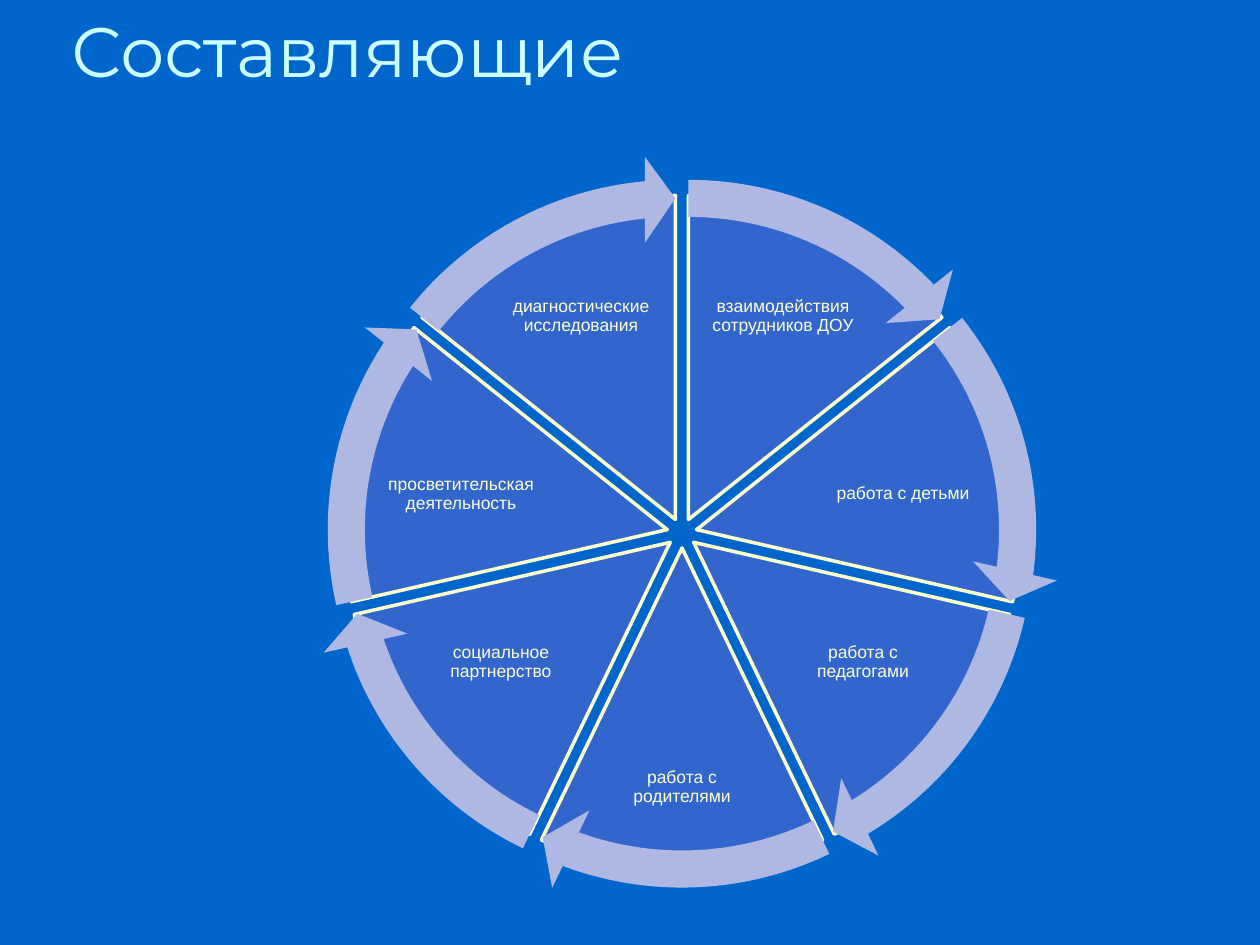
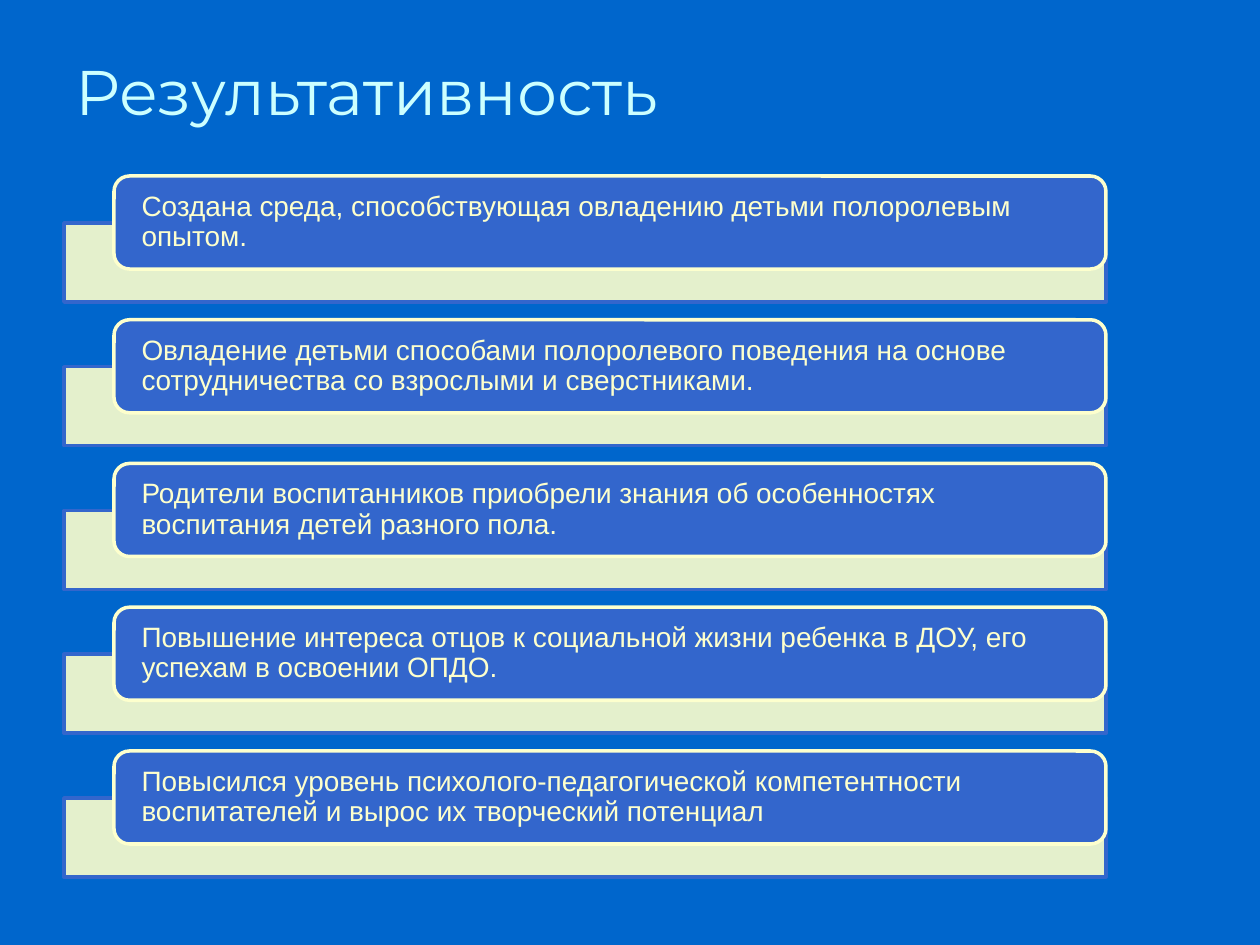
import math

from lxml import etree
from pptx import Presentation
from pptx.dml.color import RGBColor
from pptx.enum.shapes import MSO_SHAPE
from pptx.enum.text import MSO_ANCHOR, PP_ALIGN
from pptx.oxml.ns import qn
from pptx.util import Pt

PIE, ARROW = MSO_SHAPE.PIE, MSO_SHAPE.CIRCULAR_ARROW
RECT, ROUND = MSO_SHAPE.RECTANGLE, MSO_SHAPE.ROUNDED_RECTANGLE
TOP, MIDDLE = MSO_ANCHOR.TOP, MSO_ANCHOR.MIDDLE
LEFT, CENTER = PP_ALIGN.LEFT, PP_ALIGN.CENTER

COLORS = {
    "background": "0066CC",
    "title": "CCFFFF",
    "block": "3366CC",
    "cream": "FDFFCD",
    "arrow": "AEB8E2",
}
TITLE_FONT, BODY_FONT = "Montserrat", "Arial"
PX = 914400 // 126
FULL_TURN = 216
TOP_ANGLE = 162
HEAD_ANGLE = 3.275

COMPONENTS = [
    "взаимодействия сотрудников ДОУ",
    "работа с детьми",
    "работа с педагогами",
    "работа с родителями",
    "социальное партнерство",
    "просветительская деятельность",
    "диагностические исследования",
]
RIGHT_LABELS = [(24, -278, 154, 123), (132, -93, 178, 108), (104, 69, 154, 120)]
BOTTOM_LABEL = (-75, 200, 150, 108)

RESULTS = [
    "Создана среда, способствующая овладению детьми полоролевым опытом.",
    "Овладение детьми способами полоролевого поведения на основе "
    "сотрудничества со взрослыми и сверстниками.",
    "Родители воспитанников приобрели знания об особенностях "
    "воспитания детей разного пола.",
    "Повышение интереса отцов к социальной жизни ребенка в ДОУ, "
    "его успехам в освоении ОПДО.",
    "Повысился уровень психолого-педагогической компетентности "
    "воспитателей и вырос их творческий потенциал",
]


def rgb(name):
    """Return the named palette colour."""
    return RGBColor.from_string(COLORS[name])


def emu(box):
    """Scale a box in px to whole EMU."""
    return [round(v * PX) for v in box]


def add_block(s, kind, box, fill, line=None, adj=(), opacity=None):
    """Add a flat preset shape with optional outline, adjustments and opacity."""
    sp = s.shapes.add_shape(kind, *emu(box))
    sp.shadow.inherit = False
    for i, value in enumerate(adj):
        sp.adjustments[i] = value
    sp.fill.solid()
    sp.fill.fore_color.rgb = rgb(fill)
    if opacity is not None:
        clr = sp._element.spPr.find(qn("a:solidFill")).find(qn("a:srgbClr"))
        etree.SubElement(clr, qn("a:alpha")).set("val", str(opacity * 1000))
    if line:
        sp.line.color.rgb = rgb(line)
        sp.line.width = Pt(2)
    else:
        sp.line.fill.background()
    return sp


def write(sp, text, size, font, color, align=LEFT, anchor=MIDDLE, insets=(13, 6)):
    """Write one styled paragraph into a shape and return it."""
    tf = sp.text_frame
    tf.word_wrap = True
    tf.vertical_anchor = anchor
    tf.margin_left = tf.margin_right = insets[0] * PX
    tf.margin_top = tf.margin_bottom = insets[1] * PX
    p = tf.paragraphs[0]
    p.alignment = align
    r = p.add_run()
    r.text = text
    r.font.size = Pt(size)
    r.font.name = font
    r.font.color.rgb = rgb(color)
    return p


def write_body(sp, text, size, align, insets):
    """Write cream body text with tight line spacing."""
    p = write(sp, text, size, BODY_FONT, "cream", align, insets=insets)
    p.line_spacing = 0.9
    p.space_after = Pt(0.35 * size)


def add_slide(prs, title, size, box, anchor):
    """Add a blank slide with the shared background and title style."""
    s = prs.slides.add_slide(prs.slide_layouts[6])
    s.background.fill.solid()
    s.background.fill.fore_color.rgb = rgb("background")
    write(s.shapes.add_textbox(*emu(box)), title, size, TITLE_FONT, "title",
          anchor=anchor)
    return s


def add_cycle(s, box):
    """Draw the exploded wheel of sectors, labels and arrows inside a box."""
    x, y, side, _ = box
    rim, explode = 40, 15
    cx, cy = x + side / 2, y + side / 2
    span = FULL_TURN / len(COMPONENTS)
    mirrored = [(-dx - w, dy, w, h) for dx, dy, w, h in reversed(RIGHT_LABELS)]
    labels = RIGHT_LABELS + [BOTTOM_LABEL] + mirrored
    arrows = []
    for i, (text, (dx, dy, w, h)) in enumerate(zip(COMPONENTS, labels)):
        start = (TOP_ANGLE + i * span) % FULL_TURN
        end = (start + span) % FULL_TURN
        middle = math.tau * (start + span / 2) / FULL_TURN
        left, top = x + explode * math.cos(middle), y + explode * math.sin(middle)
        sector = (left + rim, top + rim, side - 2 * rim, side - 2 * rim)
        add_block(s, PIE, sector, "block", "cream", (start, end))
        label = s.shapes.add_textbox(*emu((cx + dx, cy + dy, w, h)))
        write_body(label, text, 10, CENTER, (1, 1))
        tip = (end - HEAD_ANGLE) % FULL_TURN
        arrows.append(((left, top, side, side),
                       (0.051, HEAD_ANGLE, tip, start, 0.059)))
    for arrow_box, adj in arrows:
        add_block(s, ARROW, arrow_box, "arrow", adj=adj)


def add_results(s, box):
    """Stack equally spaced result cards over pale bands inside a box."""
    x, y, w, h = box
    indent, card_h, band_drop, band_h = 50, 93, 47, 79
    step = (h - band_drop - band_h) / (len(RESULTS) - 1)
    for i, text in enumerate(RESULTS):
        top = y + i * step
        add_block(s, RECT, (x, top + band_drop, w, band_h), "cream", "block",
                  opacity=90)
        card = add_block(s, ROUND, (x + indent, top, w - indent, card_h),
                         "block", "cream")
        write_body(card, text, 16, LEFT, (23, 0))


def main():
    """Build both slides and save the presentation."""
    prs = Presentation()
    prs.slide_width, prs.slide_height = emu((1260, 945))
    s = add_slide(prs, "Составляющие", 40, (59, 2, 1092, 180), TOP)
    add_cycle(s, (318, 169, 728, 728))
    s = add_slide(prs, "Результативность", 36, (63, 45, 998, 91), MIDDLE)
    add_results(s, (64, 176, 1042, 701))
    prs.save("out.pptx")


if __name__ == "__main__":
    main()
